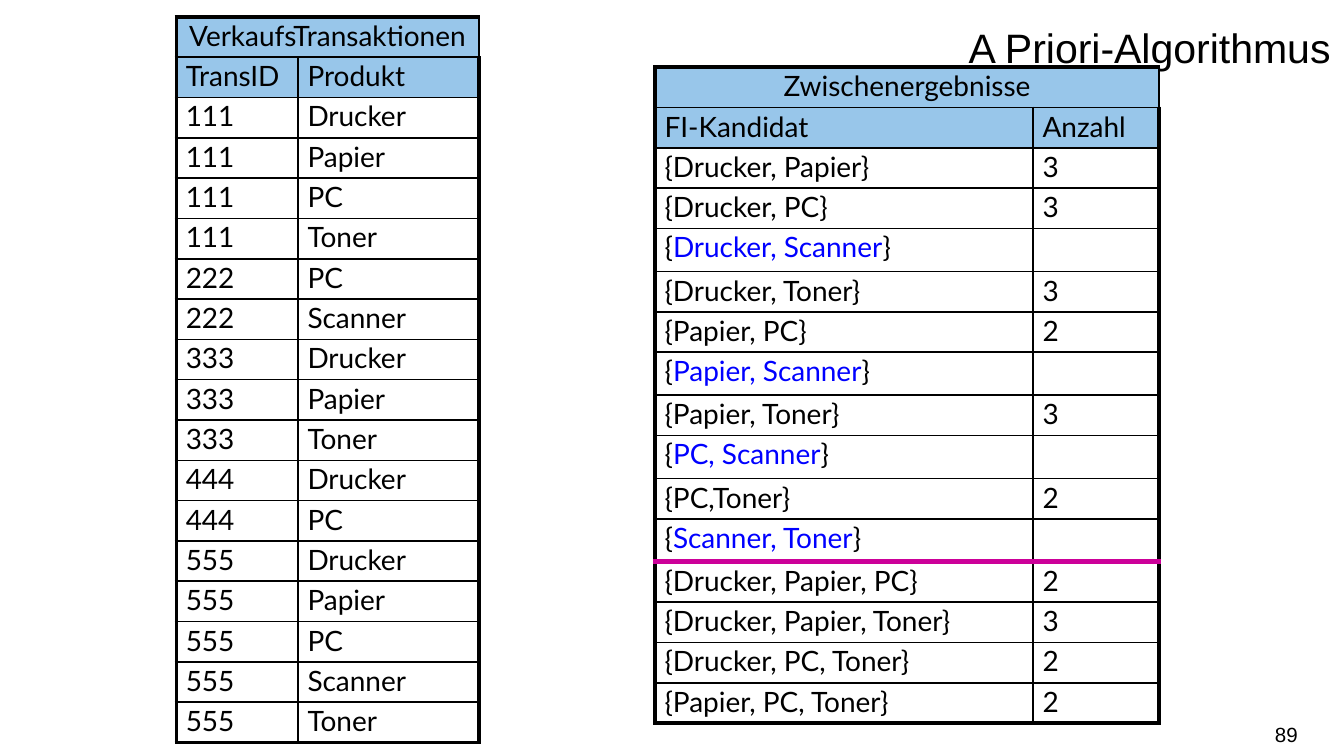
from dataclasses import dataclass

from lxml.etree import SubElement
from pptx import Presentation
from pptx.dml.color import RGBColor
from pptx.enum.text import MSO_ANCHOR, PP_ALIGN
from pptx.oxml.ns import qn
from pptx.util import Inches, Pt


@dataclass(frozen=True)
class Theme:
    black: str = "000000"
    header: str = "98C6EA"
    pruned: str = "0000FF"
    divider: str = "CC0099"
    heading_font: str = "Arial"
    table_font: str = "Lato"
    title_size: float = 22
    table_size: float = 15
    number_size: float = 11
    frame_width: float = 2.25
    line_width: float = 1
    divider_width: float = 3


GRID_COLUMNS, GRID_ROWS = 160, 90
UNIT = Inches(10) // GRID_COLUMNS
TABLE_ROW = 4.8

TRANSACTIONS = {
    "111": ["Drucker", "Papier", "PC", "Toner"],
    "222": ["PC", "Scanner"],
    "333": ["Drucker", "Papier", "Toner"],
    "444": ["Drucker", "PC"],
    "555": ["Drucker", "Papier", "PC", "Scanner", "Toner"],
}
PAIRS = [
    ("Drucker, Papier", "3"),
    ("Drucker, PC", "3"),
    ("Drucker, Scanner", ""),
    ("Drucker, Toner", "3"),
    ("Papier, PC", "2"),
    ("Papier, Scanner", ""),
    ("Papier, Toner", "3"),
    ("PC, Scanner", ""),
    ("PC,Toner", "2"),
    ("Scanner, Toner", ""),
]
TRIPLES = [
    ("Drucker, Papier, PC", "2"),
    ("Drucker, Papier, Toner", "3"),
    ("Drucker, PC, Toner", "2"),
    ("Papier, PC, Toner", "2"),
]


def grid(units):
    return round(units * UNIT)


class SlideBuilder:
    def __init__(self, slide, theme):
        self.slide = slide
        self.theme = theme

    def style(self, paragraph, font_name, size, alignment):
        paragraph.alignment = alignment
        font = paragraph.font
        font.name = font_name
        font.size = Pt(size)
        font.bold = False
        font.color.rgb = RGBColor.from_string(self.theme.black)

    def text(self, content, left, top, width, height, size, anchor, margins):
        shape = self.slide.shapes.add_textbox(*map(grid, (left, top, width, height)))
        frame = shape.text_frame
        frame.word_wrap = True
        frame.vertical_anchor = anchor
        frame.margin_top, frame.margin_right = map(Inches, margins)
        paragraph = frame.paragraphs[0]
        paragraph.text = content
        self.style(paragraph, self.theme.heading_font, size, PP_ALIGN.RIGHT)

    def borders(self, cell, lines):
        properties = cell._tc.get_or_add_tcPr()
        for index, side in enumerate("LRTB"):
            width, color = lines[side]
            line = SubElement(properties, qn(f"a:ln{side}"), w=str(Pt(width)))
            fill = SubElement(line, qn("a:solidFill"))
            SubElement(fill, qn("a:srgbClr"), val=color)
            properties.insert(index, line)

    def cell(self, cell, runs, alignment, is_header):
        cell.margin_left = cell.margin_right = Inches(0.07)
        cell.margin_top, cell.margin_bottom = Inches(0.04), Inches(0.03)
        paragraph = cell.text_frame.paragraphs[0]
        paragraph.line_spacing = 0.9
        self.style(paragraph, self.theme.table_font, self.theme.table_size, alignment)
        for content, color in runs:
            run = paragraph.add_run()
            run.text = content
            if color:
                run.font.color.rgb = RGBColor.from_string(color)
        if not runs:
            ending = paragraph._p.get_or_add_endParaRPr()
            ending.set("sz", str(self.theme.table_size * 100))
        if is_header:
            cell.fill.solid()
            cell.fill.fore_color.rgb = RGBColor.from_string(self.theme.header)
        else:
            cell.fill.background()

    def table(self, title, headings, records, left, top, widths, divider=None):
        theme = self.theme
        rows = [[[(title, None)], []], [[(heading, None)] for heading in headings], *records]
        last_row, last_column = len(rows) - 1, len(widths) - 1
        table = self.slide.shapes.add_table(
            len(rows), len(widths), grid(left), grid(top),
            grid(sum(widths)), grid(TABLE_ROW * len(rows)),
        ).table
        table.first_row = table.horz_banding = False
        for column, width in zip(table.columns, widths):
            column.width = grid(width)
        table.cell(0, 0).merge(table.cell(0, last_column))
        frame = (theme.frame_width, theme.black)
        thin = (theme.line_width, theme.black)
        bold = (theme.divider_width, theme.divider)
        for row_index, row in enumerate(rows):
            table.rows[row_index].height = grid(TABLE_ROW)
            for column_index, runs in enumerate(row):
                cell = table.cell(row_index, column_index)
                alignment = PP_ALIGN.LEFT if row_index else PP_ALIGN.CENTER
                self.cell(cell, runs, alignment, row_index < 2)
                edges = {
                    "L": frame if column_index == 0 else thin,
                    "R": frame if column_index == last_column else thin,
                    "T": frame if row_index == 0 else thin,
                    "B": frame if row_index == last_row else thin,
                }
                if divider and row_index == divider - 1:
                    edges["B"] = bold
                if divider and row_index == divider:
                    edges["T"] = bold
                self.borders(cell, edges)


def candidate_record(items, count, theme):
    if count:
        return [[(f"{{{items}}}", None)], [(count, None)]]
    return [[("{", None), (items, theme.pruned), ("}", None)], []]


def main():
    theme = Theme()
    presentation = Presentation()
    presentation.slide_width = grid(GRID_COLUMNS)
    presentation.slide_height = grid(GRID_ROWS)
    slide = presentation.slides.add_slide(presentation.slide_layouts[6])
    builder = SlideBuilder(slide, theme)

    builder.text("A Priori-Algorithmus", 0, 0, GRID_COLUMNS, 15,
                 theme.title_size, MSO_ANCHOR.TOP, (0.17, 0.1))
    sales = [
        [[(number, None)], [(product, None)]]
        for number, products in TRANSACTIONS.items()
        for product in products
    ]
    builder.table("VerkaufsTransaktionen", ["TransID", "Produkt"], sales,
                  21, 2, [14.5, 21.5])
    candidates = [candidate_record(*record, theme) for record in PAIRS + TRIPLES]
    builder.table("Zwischenergebnisse", ["FI-Kandidat", "Anzahl"], candidates,
                  78, 8, [45, 15], divider=2 + len(PAIRS))
    builder.text("89", 118.5, 85, 36, TABLE_ROW,
                 theme.number_size, MSO_ANCHOR.MIDDLE, (0.05, 0))
    presentation.save("out.pptx")


if __name__ == "__main__":
    main()
